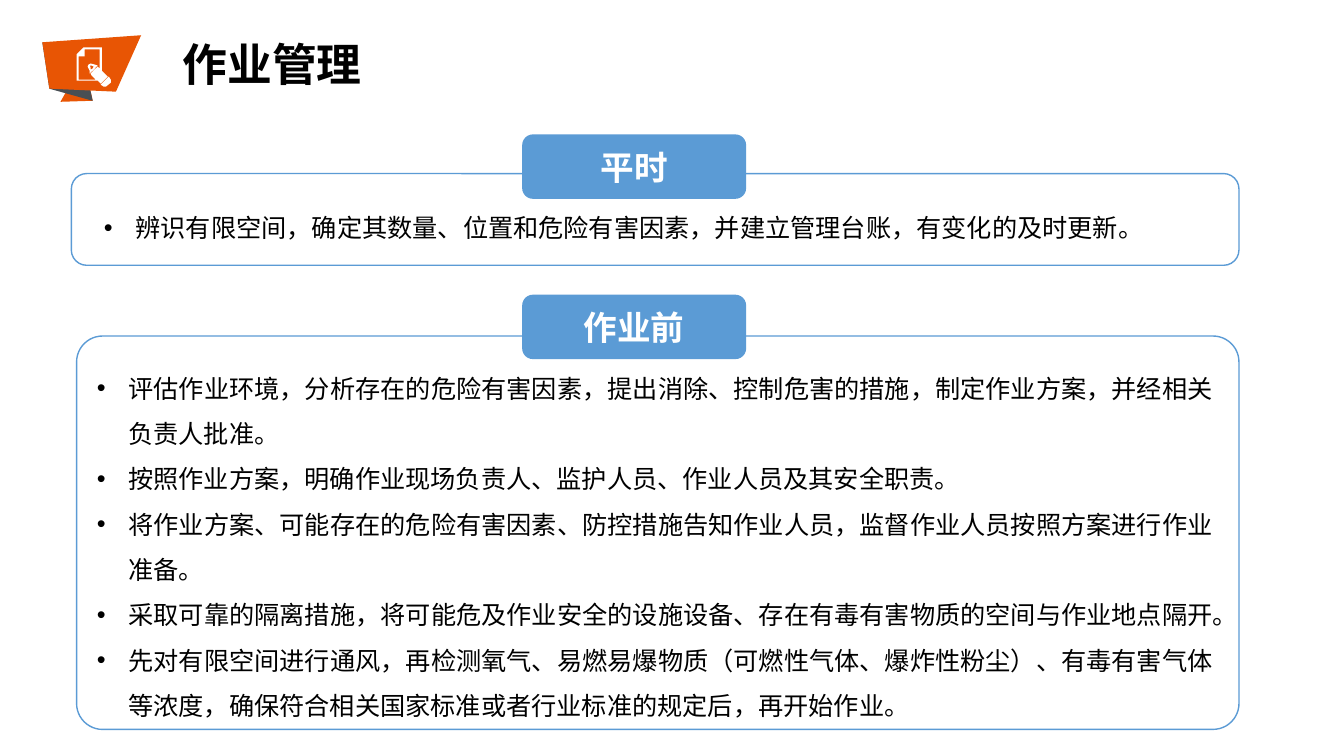
from lxml.etree import SubElement
from pptx import Presentation
from pptx.dml.color import RGBColor
from pptx.enum.shapes import MSO_SHAPE as SHAPE
from pptx.enum.text import MSO_ANCHOR as ANCHOR, MSO_AUTO_SIZE as AUTO, PP_ALIGN as ALIGN
from pptx.oxml.ns import qn
from pptx.util import Pt

BLUE, ORANGE, SLATE, WHITE, BLACK = "5B9BD5", "E85504", "494F54", "FFFFFF", "000000"
FONT = "Noto Sans CJK SC"
HANG = Pt(22.5)


def paint(color_format, color):
    color_format.fore_color.rgb = RGBColor.from_string(color)


def write(frame, lines, size, color, bold, layout):
    """Fill a text frame, one paragraph per line, with the same format for all."""
    for number, line in enumerate(lines):
        paragraph = frame.paragraphs[0] if number == 0 else frame.add_paragraph()
        for name, value in layout.items():
            setattr(paragraph, name, value)
        run = paragraph.add_run()
        run.text = line
        for name, value in {"size": Pt(size), "bold": bold, "name": FONT}.items():
            setattr(run.font, name, value)
        run.font.fill.solid()
        paint(run.font.fill, color)
        SubElement(run.font._element, qn("a:ea"), typeface=FONT)


deck = Presentation()
deck.slide_width, deck.slide_height = Pt(960), Pt(540)
slide = deck.slides.add_slide(deck.slide_layouts[3])
heading, routine_list, before_list = slide.placeholders

# Heading
heading.left, heading.top, heading.width, heading.height = map(Pt, (122.4, 36.7, 144, 33.1))
heading_format = {"word_wrap": False, "auto_size": AUTO.NONE, "vertical_anchor": ANCHOR.TOP}
for name, value in heading_format.items():
    setattr(heading.text_frame, name, value)
write(heading.text_frame, ["作业管理"], 32, BLACK, True,
      {"alignment": ALIGN.CENTER, "line_spacing": Pt(24), "space_before": Pt(0)})

# Sections: label, label top, frame box, corner, list placeholder, list box, items
sections = [
    ("平时", 96, (51, 124, 834, 65.5), 0.167, routine_list, (67, 137.5, 810, 40.3), [
        "辨识有限空间，确定其数量、位置和危险有害因素，并建立管理台账，有变化的及时更新。",
    ]),
    ("作业前", 210.5, (54.7, 240, 830.3, 281), 0.066, before_list, (62, 252, 811.5, 269.3), [
        "评估作业环境，分析存在的危险有害因素，提出消除、控制危害的措施，制定作业方案，并经相关负责人批准。",
        "按照作业方案，明确作业现场负责人、监护人员、作业人员及其安全职责。",
        "将作业方案、可能存在的危险有害因素、防控措施告知作业人员，监督作业人员按照方案进行作业准备。",
        "采取可靠的隔离措施，将可能危及作业安全的设施设备、存在有毒有害物质的空间与作业地点隔开。",
        "先对有限空间进行通风，再检测氧气、易燃易爆物质（可燃性气体、爆炸性粉尘）、有毒有害气体等浓度，"
        "确保符合相关国家标准或者行业标准的规定后，再开始作业。",
    ]),
]
list_layout = {"alignment": ALIGN.JUSTIFY, "line_spacing": 1.5, "space_before": Pt(0)}
for label, label_top, frame_box, corner, items_holder, list_box, items in sections:
    border = slide.shapes.add_shape(SHAPE.ROUNDED_RECTANGLE, *map(Pt, frame_box))
    border.adjustments[0] = corner
    border.shadow.inherit = False
    border.fill.background()
    paint(border.line.fill if border.line.fill.solid() is None else None, BLUE)
    border.line.width = Pt(1)

    holder_box = zip(("left", "top", "width", "height"), list_box)
    for name, value in holder_box:
        setattr(items_holder, name, Pt(value))
    items_holder.text_frame.auto_size = AUTO.NONE
    write(items_holder.text_frame, items, 18, BLACK, False, list_layout)
    for paragraph in items_holder.text_frame.paragraphs:
        properties = paragraph._p.get_or_add_pPr()
        properties.set("marL", str(HANG))
        properties.set("indent", str(-HANG))

    badge = slide.shapes.add_shape(SHAPE.ROUNDED_RECTANGLE, Pt(373), Pt(label_top), Pt(160), Pt(46))
    badge.shadow.inherit = False
    badge.fill.solid()
    paint(badge.fill, BLUE)
    badge.line.fill.background()
    badge.text_frame.vertical_anchor = ANCHOR.MIDDLE
    write(badge.text_frame, [label], 24, WHITE, True, {"alignment": ALIGN.CENTER})

# Sign with a page and pencil: outlines in units of 0.72 pt
sign_parts = [
    (ORANGE, [[(92, 100), (83, 60), (60, 101)]]),
    (SLATE, [[(83, 60), (42, 42), (49, 88), (92, 100)]]),
    (ORANGE, [[(140, 35), (42, 42), (49, 88), (115, 91)]]),
    (WHITE, [
        [(110, 82), (105, 86), (103, 86), (100, 84), (108, 76), (110, 79)],
        [(99, 49), (84, 49), (84, 56), (78, 56), (78, 79), (95, 79), (91, 75), (90, 73),
         (96, 67), (97, 66), (99, 68)],
        [(101, 82), (100, 83), (97, 80), (76, 80), (76, 54), (83, 47), (101, 47), (101, 70),
         (107, 76)],
        [(91, 65), (89, 65), (90, 67), (90, 69), (92, 68), (93, 66)],
        [(93, 69), (89, 73), (89, 70), (87, 66), (88, 64), (90, 63), (94, 64), (97, 65)],
    ]),
]
for color, outlines in sign_parts:
    builder = slide.shapes.build_freeform(*outlines[0][0], scale=Pt(0.72))
    for number, outline in enumerate(outlines):
        if number:
            builder.move_to(*outline[0])
        builder.add_line_segments(outline[1:], close=True)
    sign = builder.convert_to_shape()
    sign.shadow.inherit = False
    sign.fill.solid()
    paint(sign.fill, color)
    sign.line.fill.background()

deck.save("out.pptx")
